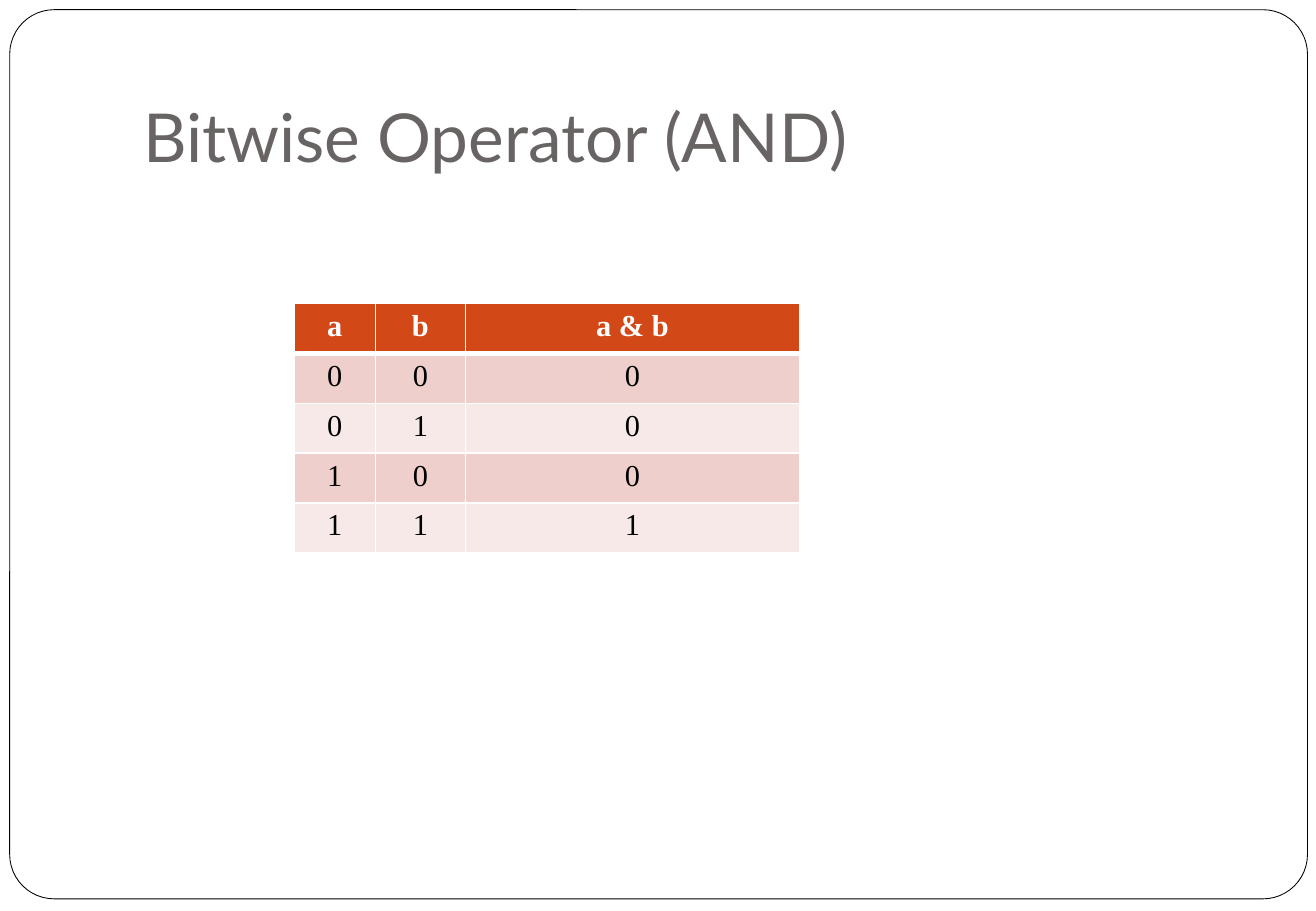
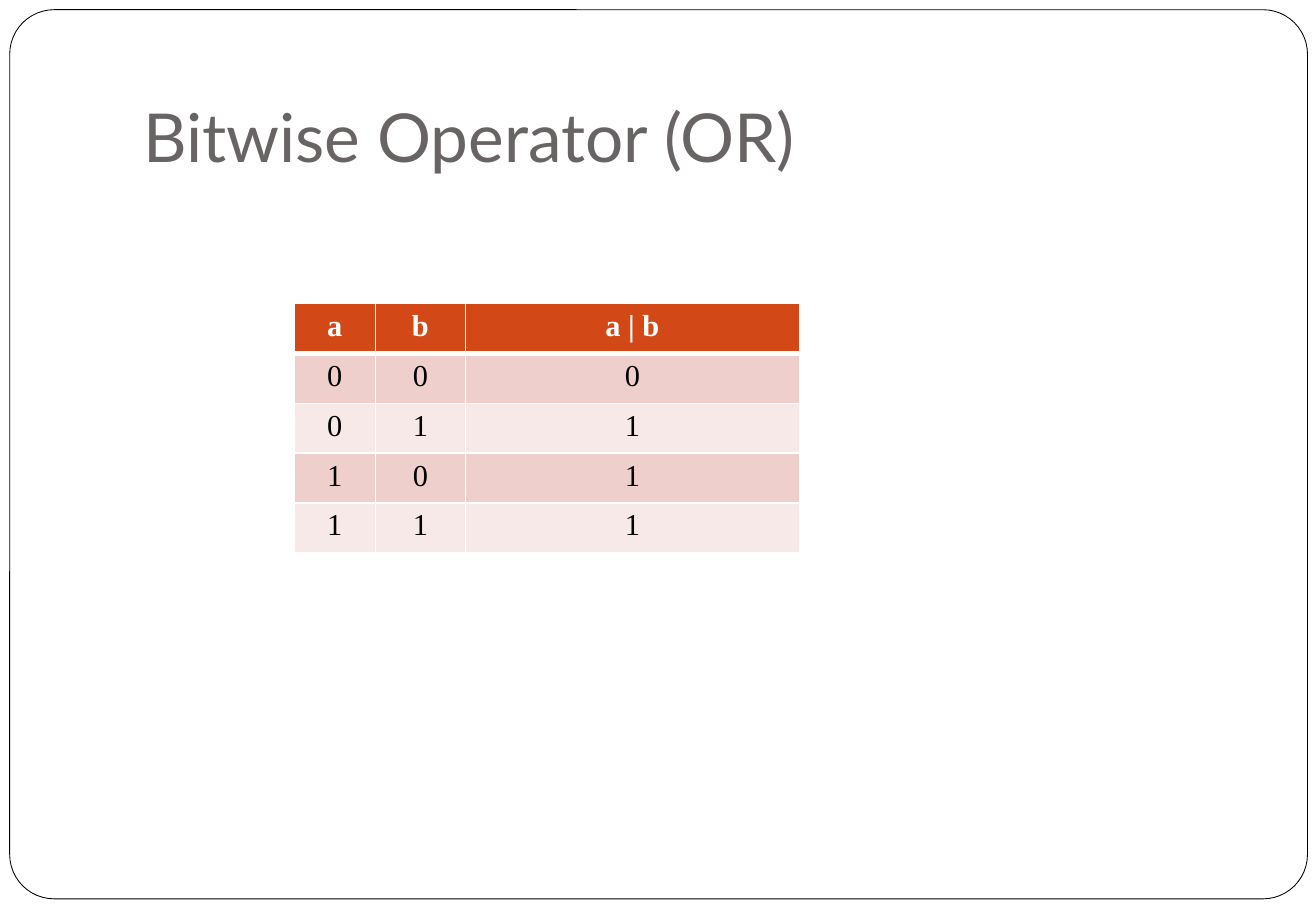
from dataclasses import dataclass
from itertools import product

from lxml.etree import SubElement
from pptx import Presentation
from pptx.dml.color import RGBColor
from pptx.enum.shapes import MSO_SHAPE
from pptx.enum.text import MSO_ANCHOR, PP_ALIGN
from pptx.oxml.ns import qn
from pptx.slide import Slide
from pptx.table import _Cell
from pptx.util import Inches, Pt

COLORS = {
    "white": "FFFFFF",
    "black": "000000",
    "title": "696464",
    "header": "D34817",
    "odd_row": "EFCFCC",
    "even_row": "F7E9E8",
}
TITLE_FONT = "Lato"
TABLE_FONT = "Times New Roman"
COLUMN_WIDTHS = (0.67, 0.74, 2.75)
ROW_HEIGHT = 0.41
THIN, THICK = 1, 3


@dataclass(frozen=True)
class TruthTable:
    name: str
    symbol: str
    results: tuple[int, int, int, int]

    def rows(self) -> list[tuple[str, str, str]]:
        inputs = product((0, 1), repeat=2)
        body = [(str(a), str(b), str(result)) for (a, b), result in zip(inputs, self.results)]
        return [("a", "b", f"a {self.symbol} b"), *body]


TRUTH_TABLES = (
    TruthTable("AND", "&", (0, 0, 0, 1)),
    TruthTable("OR", "|", (0, 1, 1, 1)),
)


def color(name: str) -> RGBColor:
    return RGBColor.from_string(COLORS[name])


def add_frame(page: Slide) -> None:
    frame = page.shapes.add_shape(
        MSO_SHAPE.ROUNDED_RECTANGLE, Inches(0.08), Inches(0.08), Inches(10.68), Inches(7.32)
    )
    frame.adjustments[0] = 0.05
    frame.shadow.inherit = False
    frame.fill.solid()
    frame.fill.fore_color.rgb = color("white")
    frame.line.color.rgb = color("black")
    frame.line.width = Pt(0.5)


def add_title(page: Slide, text: str) -> None:
    box = page.shapes.add_textbox(Inches(1.08), Inches(0.3), Inches(9.21), Inches(1.25))
    frame = box.text_frame
    frame.word_wrap = True
    frame.vertical_anchor = MSO_ANCHOR.BOTTOM
    frame.margin_bottom = Inches(0.1)
    para = frame.paragraphs[0]
    para.text = text
    para.font.name = TITLE_FONT
    para.font.size = Pt(40)
    para.font.color.rgb = color("title")


def set_borders(cell: _Cell, top: int, bottom: int) -> None:
    """Draw white borders, with the top and bottom widths in points."""
    properties = cell._tc.get_or_add_tcPr()
    for side, width in (("L", THIN), ("R", THIN), ("T", top), ("B", bottom)):
        line = SubElement(properties, qn(f"a:ln{side}"), w=str(Pt(width)))
        fill = SubElement(line, qn("a:solidFill"))
        SubElement(fill, qn("a:srgbClr"), val=COLORS["white"])


def style_cell(cell: _Cell, row: int) -> None:
    is_header = row == 0
    set_borders(cell, THICK if row == 1 else THIN, THICK if is_header else THIN)
    fill_name = "header" if is_header else "odd_row" if row % 2 else "even_row"
    cell.fill.solid()
    cell.fill.fore_color.rgb = color(fill_name)
    para = cell.text_frame.paragraphs[0]
    para.alignment = PP_ALIGN.CENTER
    para.font.name = TABLE_FONT
    para.font.size = Pt(18)
    para.font.bold = is_header
    para.font.color.rgb = color("white" if is_header else "black")


def add_truth_table(page: Slide, rows: list[tuple[str, str, str]]) -> None:
    table = page.shapes.add_table(
        len(rows), len(COLUMN_WIDTHS), Inches(2.42), Inches(2.5),
        Inches(sum(COLUMN_WIDTHS)), Inches(ROW_HEIGHT * len(rows)),
    ).table
    for column, width in zip(table.columns, COLUMN_WIDTHS):
        column.width = Inches(width)
    for row, values in enumerate(rows):
        table.rows[row].height = Inches(ROW_HEIGHT)
        for column, value in enumerate(values):
            cell = table.cell(row, column)
            cell.text = value
            style_cell(cell, row)


def main() -> None:
    deck = Presentation()
    deck.slide_width = Inches(10.83)
    deck.slide_height = Inches(7.5)
    for truth_table in TRUTH_TABLES:
        page = deck.slides.add_slide(deck.slide_layouts[6])
        add_frame(page)
        add_title(page, f"Bitwise Operator ({truth_table.name})")
        add_truth_table(page, truth_table.rows())
    deck.save("out.pptx")


if __name__ == "__main__":
    main()
